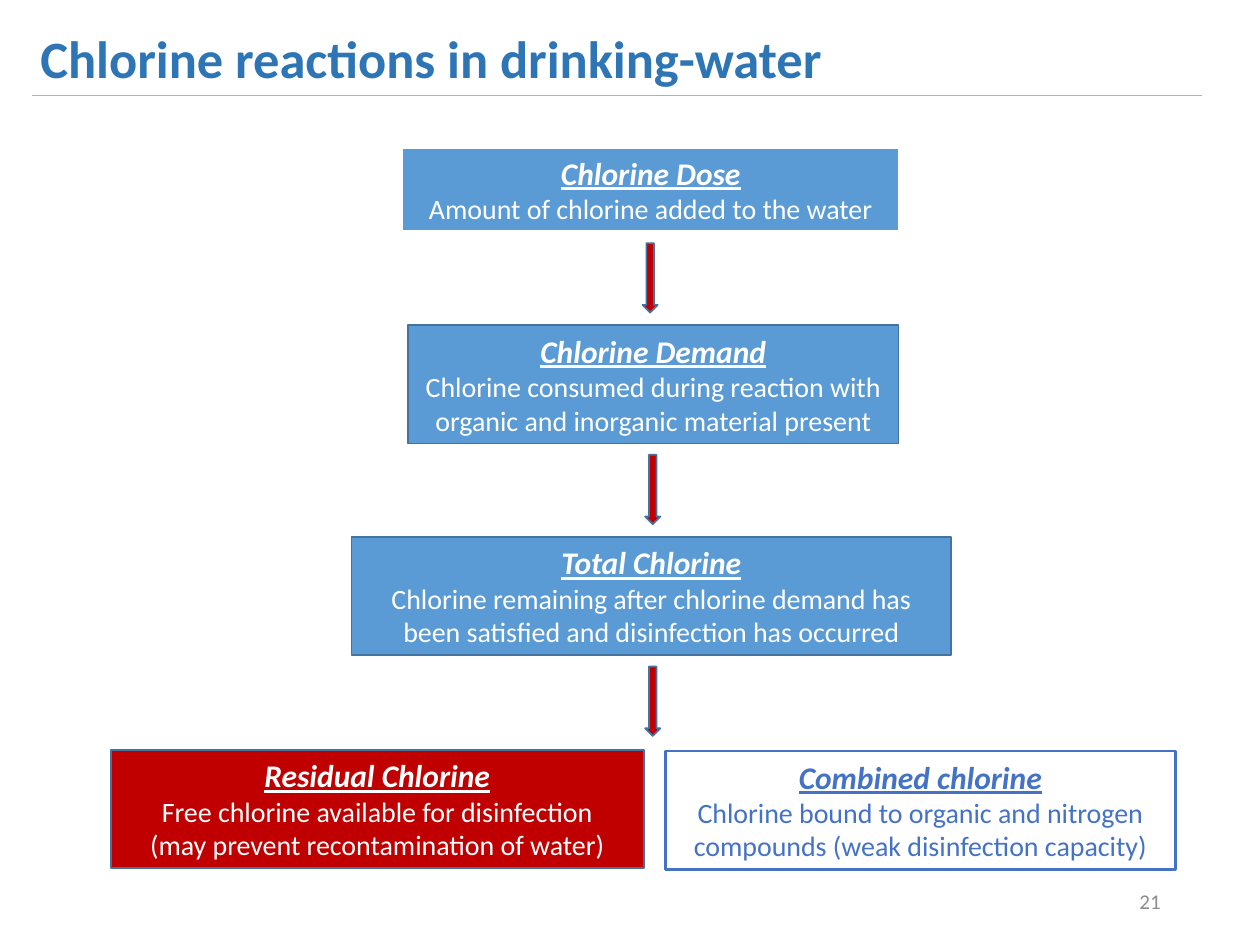
from pptx import Presentation
from pptx.dml.color import RGBColor
from pptx.enum.shapes import MSO_CONNECTOR, MSO_SHAPE
from pptx.enum.text import MSO_ANCHOR, PP_ALIGN
from pptx.oxml.ns import qn
from pptx.util import Inches, Pt
from lxml import etree

RECT, ARROW = MSO_SHAPE.RECTANGLE, MSO_SHAPE.DOWN_ARROW
MIDDLE = MSO_ANCHOR.MIDDLE
LEFT, CENTER, RIGHT = PP_ALIGN.LEFT, PP_ALIGN.CENTER, PP_ALIGN.RIGHT
FONT = "Calibri"
COLORS = {
    "title": "2E75B6", "rule": "B2B2B2", "blue": "5B9BD5", "edge": "43739E",
    "red": "C00000", "white": "FFFFFF", "royal": "4472C4", "gray": "8C8C8C",
}


def color(name):
    return RGBColor.from_string(COLORS[name])


def write(para, text, size, ink, align, bold=False, accent=False):
    """Add one run per line; accent makes it italic and underlined."""
    para.alignment = align
    for i, line in enumerate(text.split("\n")):
        if i:
            para.add_line_break()
        run = para.add_run()
        run.text = line
        font = run.font
        font.name, font.size, font.bold = FONT, Pt(size), bold
        font.italic = font.underline = accent
        font.color.rgb = color(ink)


prs = Presentation()
prs.slide_width, prs.slide_height = Inches(10), Inches(7.5)
slide = prs.slides.add_slide(prs.slide_layouts[5])
shapes = slide.shapes

# Title and rule
title = shapes.title
title.left, title.top = Inches(0.12), Inches(0.16)
title.width, title.height = Inches(9.76), Inches(0.6)
frame = title.text_frame
frame.margin_left = Inches(0.2)
frame.vertical_anchor = MIDDLE
write(frame.paragraphs[0], "Chlorine reactions in drinking-water", 30, "title", LEFT, bold=True)

rule = shapes.add_connector(
    MSO_CONNECTOR.STRAIGHT, Inches(0.25), Inches(0.76), Inches(9.54), Inches(0.76))
rule.line.color.rgb = color("rule")
rule.line.width = Pt(0.75)
etree.SubElement(rule.element.spPr, qn("a:effectLst"))

# Boxes: left, top, width, height, fill, edge, edge width, ink, head, body
boxes = [
    (3.19, 1.17, 3.95, 0.67, "blue", "white", 1.5, "white",
     "Chlorine Dose", "Amount of chlorine added to the water"),
    (3.24, 2.58, 3.89, 0.94, "blue", "edge", 1, "white", "Chlorine Demand",
     "Chlorine consumed during reaction with organic and inorganic material present"),
    (2.79, 4.26, 4.76, 0.94, "blue", "edge", 1, "white", "Total Chlorine",
     "Chlorine remaining after chlorine demand has been satisfied and disinfection has occurred"),
    (0.88, 5.95, 4.23, 0.94, "red", "edge", 1, "white", "Residual Chlorine",
     "Free chlorine available for disinfection\n(may prevent recontamination of water)"),
    (5.28, 5.96, 4.05, 0.94, "white", "royal", 1.5, "royal", "Combined chlorine",
     "Chlorine bound to organic and nitrogen compounds (weak disinfection capacity)"),
]
for left, top, width, height, fill, edge, weight, ink, head, body in boxes:
    box = shapes.add_shape(RECT, Inches(left), Inches(top), Inches(width), Inches(height))
    box.shadow.inherit = False
    box.fill.solid()
    box.fill.fore_color.rgb = color(fill)
    box.line.color.rgb = color(edge)
    box.line.width = Pt(weight)
    frame = box.text_frame
    frame.word_wrap = True
    frame.vertical_anchor = MIDDLE
    write(frame.paragraphs[0], head, 18, ink, CENTER, bold=True, accent=True)
    write(frame.add_paragraph(), body, 16, ink, CENTER)

# Arrows between the levels
for left, top in [(5.1, 1.93), (5.12, 3.61), (5.12, 5.29)]:
    arrow = shapes.add_shape(ARROW, Inches(left), Inches(top), Inches(0.12), Inches(0.55))
    arrow.shadow.inherit = False
    arrow.fill.solid()
    arrow.fill.fore_color.rgb = color("red")
    arrow.line.color.rgb = color("edge")
    arrow.line.width = Pt(1)

# Page number
page = shapes.add_textbox(Inches(7.06), Inches(6.95), Inches(2.25), Inches(0.4))
page.text_frame.word_wrap = True
page.text_frame.vertical_anchor = MIDDLE
write(page.text_frame.paragraphs[0], "21", 12, "gray", RIGHT)

prs.save("out.pptx")
